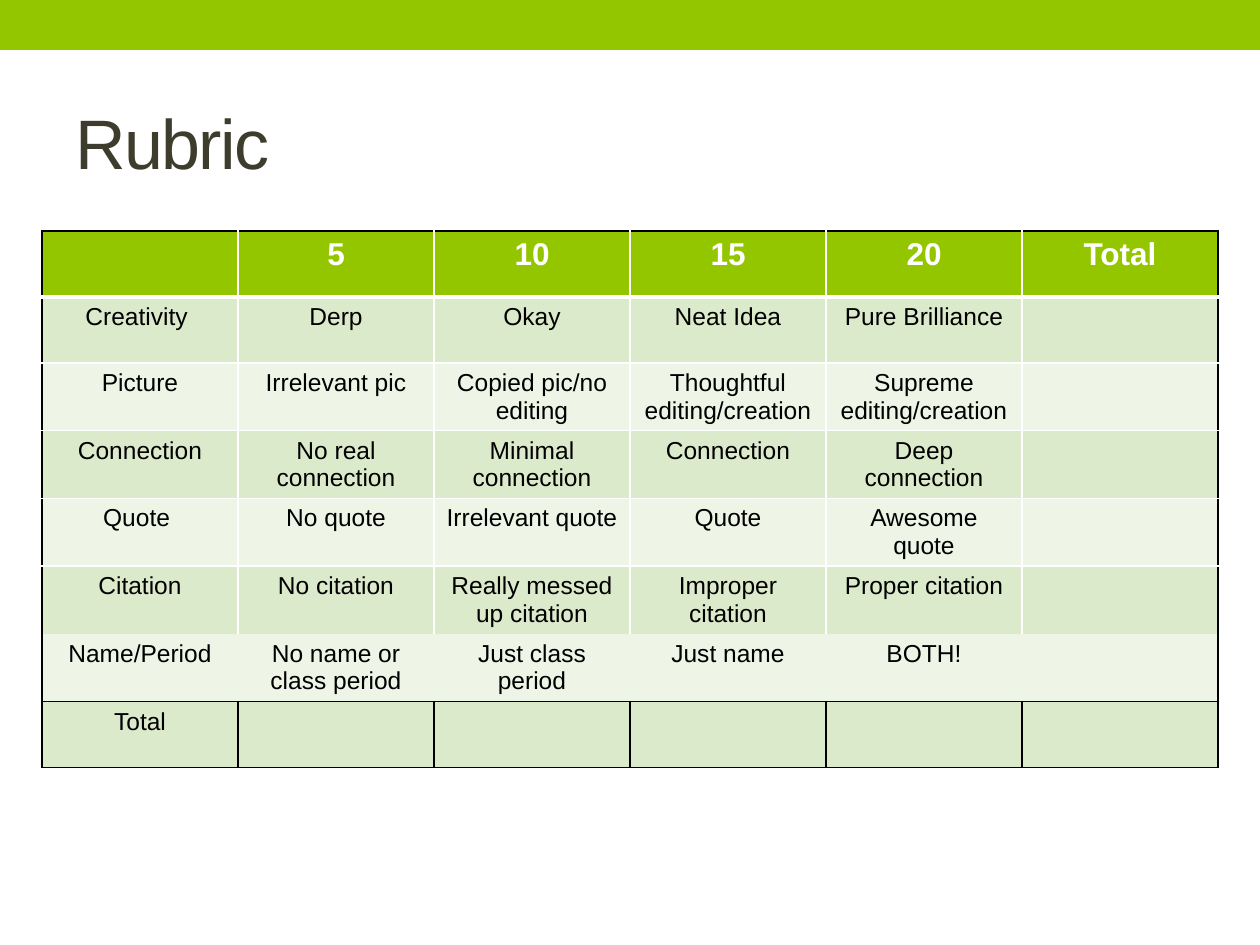
import lxml.etree
import pptx
import pptx.dml.color
import pptx.enum.shapes
import pptx.enum.text
import pptx.oxml.ns
import pptx.util

SCALE = 914400 // 126
FONT = "Arial"
COLORS = {
    "green": "94C600",
    "band": "DCEACC",
    "pale": "EEF5E7",
    "title": "3E3D2D",
    "black": "000000",
    "white": "FFFFFF",
}
COLUMN_WIDTH = 196
ROW_HEIGHT = 66
RUBRIC = [
    ["", "5", "10", "15", "20", "Total"],
    ["Creativity ", "Derp", "Okay", "Neat Idea", "Pure Brilliance", ""],
    ["Picture", "Irrelevant pic", "Copied pic/no editing",
     "Thoughtful editing/creation", "Supreme editing/creation", ""],
    ["Connection", "No real connection", "Minimal connection",
     "Connection", "Deep connection", ""],
    ["Quote ", "No quote", "Irrelevant quote", "Quote", "Awesome quote", ""],
    ["Citation", "No citation", "Really messed up citation",
     "Improper citation", "Proper citation", ""],
    ["Name/Period", "No name or class period", "Just class period",
     "Just name", "BOTH!", ""],
    ["Total", "", "", "", "", ""],
]


def px(length):
    return pptx.util.Emu(length * SCALE)


def color(name):
    return pptx.dml.color.RGBColor.from_string(COLORS[name])


def format_text(frame, size, color_name, align, bold=False):
    for para in frame.paragraphs:
        para.alignment = align
        for span in para.runs:
            span.font.name = FONT
            span.font.size = pptx.util.Pt(size)
            span.font.bold = bold
            span.font.color.rgb = color(color_name)


def add_bar(page):
    bar = page.shapes.add_shape(
        pptx.enum.shapes.MSO_SHAPE.RECTANGLE, 0, 0, px(1260), px(50))
    bar.shadow.inherit = False
    bar.fill.solid()
    bar.fill.fore_color.rgb = color("green")
    bar.line.fill.background()


def set_title(page, text):
    title = page.shapes.title
    title.left, title.top, title.width, title.height = map(px, (63, 73, 1134, 136))
    frame = title.text_frame
    frame.text = text
    frame.vertical_anchor = pptx.enum.text.MSO_ANCHOR.MIDDLE
    format_text(frame, 40, "title", pptx.enum.text.PP_ALIGN.LEFT)
    frame.paragraphs[0].runs[0].font._element.set("spc", "-100")


def set_border(cell, side, color_name, width):
    properties = cell._tc.get_or_add_tcPr()
    qn = pptx.oxml.ns.qn
    line = lxml.etree.SubElement(properties, qn(f"a:ln{side}"))
    line.set("w", str(pptx.util.Pt(width)))
    if color_name is None:
        lxml.etree.SubElement(line, qn("a:noFill"))
        return
    fill = lxml.etree.SubElement(line, qn("a:solidFill"))
    lxml.etree.SubElement(fill, qn("a:srgbClr")).set("val", COLORS[color_name])


def cell_borders(row, column):
    last_row, last_column = len(RUBRIC) - 1, len(RUBRIC[0]) - 1
    if row == last_row:
        return {side: ("black", 1) for side in "LRTB"}
    name_row = row == last_row - 1
    inner = None if name_row else "white"
    bottom = "black" if name_row else None if row == last_row - 2 else "white"
    return {
        "L": ("black" if column == 0 else inner, 1),
        "R": ("black" if column == last_column else inner, 1),
        "T": ("black" if row == 0 else inner, 3 if row == 1 else 1),
        "B": (bottom, 3 if row == 0 else 1),
    }


def fill_cell(cell, row, column, text):
    header = row == 0
    for side, (color_name, width) in cell_borders(row, column).items():
        set_border(cell, side, color_name, width)
    cell.fill.solid()
    cell.fill.fore_color.rgb = color(
        "green" if header else "band" if row % 2 else "pale")
    if text:
        cell.text_frame.text = text
        format_text(cell.text_frame, 18 if header else 14,
                    "white" if header else "black",
                    pptx.enum.text.PP_ALIGN.CENTER, header)


def add_rubric(page):
    rows, columns = len(RUBRIC), len(RUBRIC[0])
    table = page.shapes.add_table(
        rows, columns, px(42), px(231),
        px(columns * COLUMN_WIDTH), px(rows * ROW_HEIGHT)).table
    table.horz_banding = False
    for column in table.columns:
        column.width = px(COLUMN_WIDTH)
    for row in table.rows:
        row.height = px(ROW_HEIGHT)
    for row, texts in enumerate(RUBRIC):
        for column, text in enumerate(texts):
            fill_cell(table.cell(row, column), row, column, text)


def main():
    deck = pptx.Presentation()
    deck.slide_width, deck.slide_height = px(1260), px(945)
    page = deck.slides.add_slide(deck.slide_layouts[5])
    add_bar(page)
    set_title(page, "Rubric")
    add_rubric(page)
    deck.save("out.pptx")


if __name__ == "__main__":
    main()
